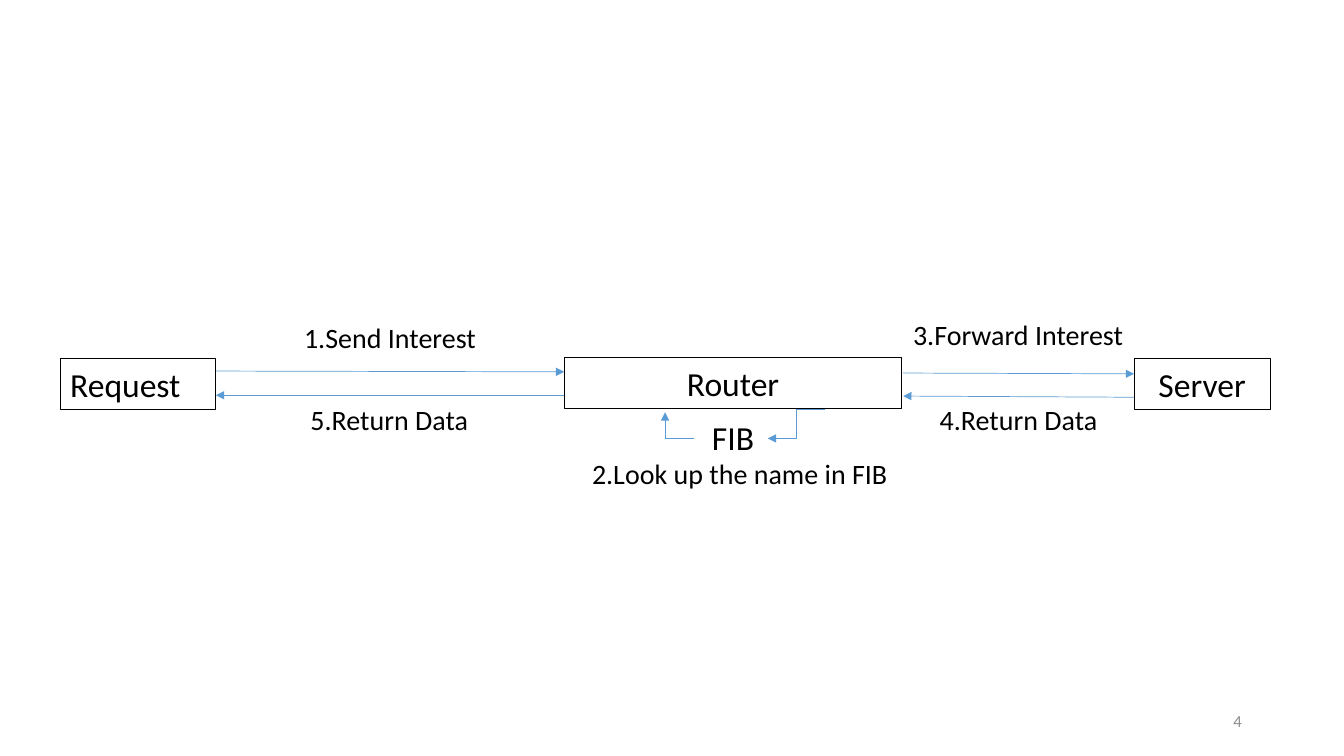
from lxml import etree
from pptx import Presentation
from pptx.dml.color import RGBColor
from pptx.enum.shapes import MSO_CONNECTOR, MSO_SHAPE
from pptx.enum.text import MSO_ANCHOR, PP_ALIGN
from pptx.oxml.ns import qn
from pptx.util import Cm, Pt

RECT = MSO_SHAPE.RECTANGLE
LINE, ELBOW = MSO_CONNECTOR.STRAIGHT, MSO_CONNECTOR.ELBOW
LEFT, MID, RIGHT = PP_ALIGN.LEFT, PP_ALIGN.CENTER, PP_ALIGN.RIGHT
TOP, CENTER = MSO_ANCHOR.TOP, MSO_ANCHOR.MIDDLE
BLACK, BLUE, GRAY = "000000", "5B9BD5", "8C8C8C"
FONT = "Calibri"


def color(code):
    return RGBColor.from_string(code)


def write(shape, text, size, align, ink=BLACK, anchor=TOP):
    frame = shape.text_frame
    frame.word_wrap = True
    frame.vertical_anchor = anchor
    para = frame.paragraphs[0]
    para.text = text
    para.alignment = align
    para.font.name = FONT
    para.font.size = Pt(size)
    para.font.color.rgb = color(ink)


def add_box(slide, text, left, top, width, align=MID):
    box = slide.shapes.add_shape(RECT, Cm(left), Cm(top), Cm(width), Cm(1.27))
    box.shadow.inherit = False
    box.fill.background()
    box.line.color.rgb = color(BLACK)
    box.line.width = Pt(0.75)
    write(box, text, 24, align)


def add_label(slide, text, left, top, width, height=1.12, size=20,
              align=MID, ink=BLACK, anchor=TOP):
    label = slide.shapes.add_textbox(Cm(left), Cm(top), Cm(width), Cm(height))
    write(label, text, size, align, ink, anchor)


def add_link(slide, start, end, kind=LINE, arrow=True):
    points = [Cm(value) for value in start + end]
    link = slide.shapes.add_connector(kind, *points)
    link.line.color.rgb = color(BLUE)
    link.line.width = Pt(0.5)
    if arrow:
        stroke = link.line._get_or_add_ln()
        etree.SubElement(stroke, qn("a:tailEnd"), type="triangle")
    etree.SubElement(link._element.spPr, qn("a:effectLst"))


def main():
    deck = Presentation()
    deck.slide_width, deck.slide_height = Cm(33.87), Cm(19.05)
    slide = deck.slides.add_slide(deck.slide_layouts[6])

    add_box(slide, "Request", 1.52, 9.04, 3.91, LEFT)
    add_box(slide, "Router", 14.22, 9.02, 8.51)
    add_box(slide, "Server", 28.58, 9.04, 3.43)

    add_link(slide, (5.44, 9.35), (14.22, 9.37))
    add_link(slide, (22.76, 9.4), (28.58, 9.42))
    add_link(slide, (28.58, 10.01), (22.76, 9.98))
    add_link(slide, (14.22, 9.96), (5.44, 9.96))
    add_link(slide, (20.8, 10.31), (19.35, 11.05), ELBOW)
    add_link(slide, (17.48, 11.05), (16.76, 11.05), arrow=False)
    add_link(slide, (16.76, 11.05), (16.76, 10.39))

    add_label(slide, "FIB", 14.22, 10.39, 8.51, 1.27, 24)
    add_label(slide, "1.Send Interest", 7.34, 7.95, 4.98)
    add_label(slide, "2.Look up the name in FIB", 14.53, 11.38, 8.23)
    add_label(slide, "3.Forward Interest", 22.76, 7.87, 6.1, align=LEFT)
    add_label(slide, "4.Return Data", 22.76, 10.01, 5.82)
    add_label(slide, "5.Return Data", 7.32, 10.03, 4.98)
    add_label(slide, "4", 23.93, 17.65, 7.62, 1.02, 12, RIGHT, GRAY, CENTER)

    deck.save("out.pptx")


if __name__ == "__main__":
    main()
